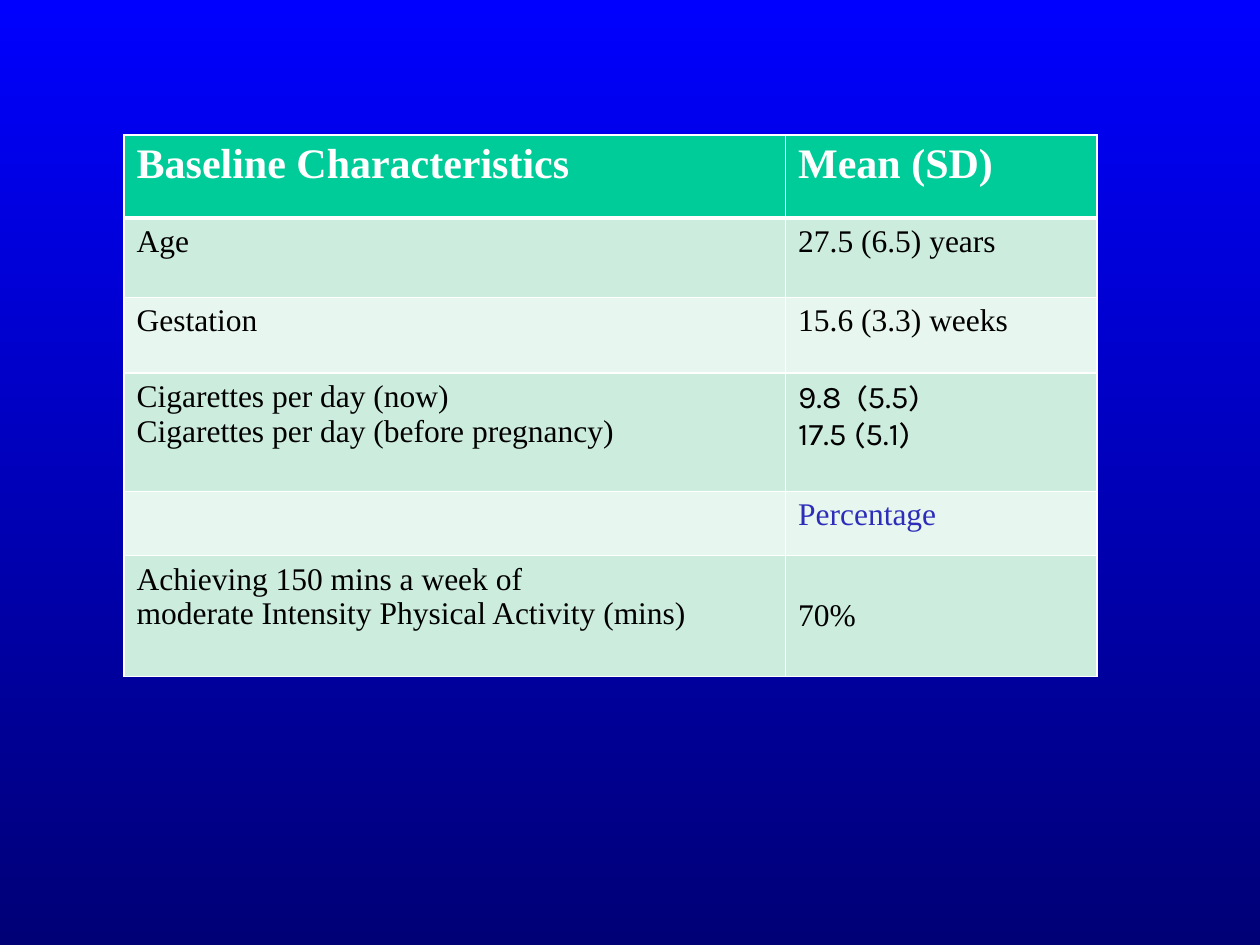
from dataclasses import dataclass

from lxml.etree import SubElement
from pptx import Presentation
from pptx.dml.color import RGBColor as RGB
from pptx.oxml import parse_xml
from pptx.oxml.ns import nsdecls, qn
from pptx.util import Inches, Pt


@dataclass(frozen=True)
class Theme:
    sky: str = "0000FF"
    deep: str = "000076"
    head: str = "00CC99"
    bands: tuple = ("CCECDE", "E7F6EF")
    white: str = "FFFFFF"
    ink: str = "000000"
    accent: str = "2D2DB9"
    serif: str = "Times New Roman"
    sans: str = "Karla"
    big: int = 24
    body: int = 18
    thin: int = 1
    thick: int = 3


class Deck:
    """Holds the theme and current slide; lengths are in grid units."""

    unit = 0.1  # inches: the slide is 100 columns by 75 rows

    def __init__(self, theme):
        self.theme = theme
        self.prs = Presentation()
        self.prs.slide_width = self.size(100)
        self.prs.slide_height = self.size(75)
        self.slide = self.prs.slides.add_slide(self.prs.slide_layouts[6])

    def size(self, count):
        return Inches(count * self.unit)

    def back(self):
        fill = self.slide.background.fill
        fill.gradient()
        fill.gradient_angle = 270
        for stop, tint in zip(fill.gradient_stops, (self.theme.sky, self.theme.deep)):
            stop.color.rgb = RGB.from_string(tint)

    def edges(self, cell, top, base):
        props = cell._tc.get_or_add_tcPr()
        thin = self.theme.thin
        sides = {"L": thin, "R": thin, "T": top, "B": base}
        for spot, (side, width) in enumerate(sides.items()):
            line = parse_xml(f'<a:ln{side} {nsdecls("a")} w="{Pt(width)}"/>')
            solid = SubElement(line, qn("a:solidFill"))
            SubElement(solid, qn("a:srgbClr"), val=self.theme.white)
            props.insert(spot, line)

    def cell(self, cell, text, fill, ink, head=False, font=None):
        theme = self.theme
        cell.fill.solid()
        cell.fill.fore_color.rgb = RGB.from_string(fill)
        cell.text = text
        for para in cell.text_frame.paragraphs:
            para.font.name = font or theme.serif
            para.font.size = Pt(theme.big if head else theme.body)
            para.font.bold = head
            para.font.color.rgb = RGB.from_string(ink)

    def table(self, left, top, cols, rows, data, looks):
        theme = self.theme
        grid = self.slide.shapes.add_table(
            len(rows), len(cols), self.size(left), self.size(top),
            self.size(sum(cols)), self.size(sum(rows))).table
        grid.horz_banding = False
        for col, width in zip(grid.columns, cols):
            col.width = self.size(width)
        for row, height in zip(grid.rows, rows):
            row.height = self.size(height)
        for r, line in enumerate(data):
            head = r == 0
            fill = theme.head if head else theme.bands[(r - 1) % 2]
            for c, text in enumerate(line):
                look = {"ink": theme.white if head else theme.ink}
                look |= looks.get((r, c), {})
                cell = grid.cell(r, c)
                self.cell(cell, text, fill, head=head, **look)
                self.edges(cell, theme.thick if r == 1 else theme.thin,
                           theme.thick if head else theme.thin)
        return grid


def main():
    theme = Theme()
    deck = Deck(theme)

    # Background
    deck.back()

    # Baseline table
    data = [
        ("Baseline Characteristics", "Mean (SD)"),
        ("Age", "27.5 (6.5) years"),
        ("Gestation", "15.6 (3.3) weeks"),
        ("Cigarettes per day (now)\nCigarettes per day (before pregnancy)",
         "9.8  (5.5)\n17.5 (5.1)"),
        ("", "Percentage"),
        ("Achieving 150 mins a week of\n"
         "moderate Intensity Physical Activity (mins)", "70%"),
    ]
    looks = {(3, 1): {"font": theme.sans}, (4, 1): {"ink": theme.accent}}
    grid = deck.table(9.85, 10.7, (52.5, 24.7), (6.6, 6.3, 6, 9.4, 5.1, 9.6),
                      data, looks)

    # The share sits level with the second line of its label
    grid.cell(5, 1).margin_top = deck.size(3.4)

    deck.prs.save("out.pptx")


if __name__ == "__main__":
    main()
